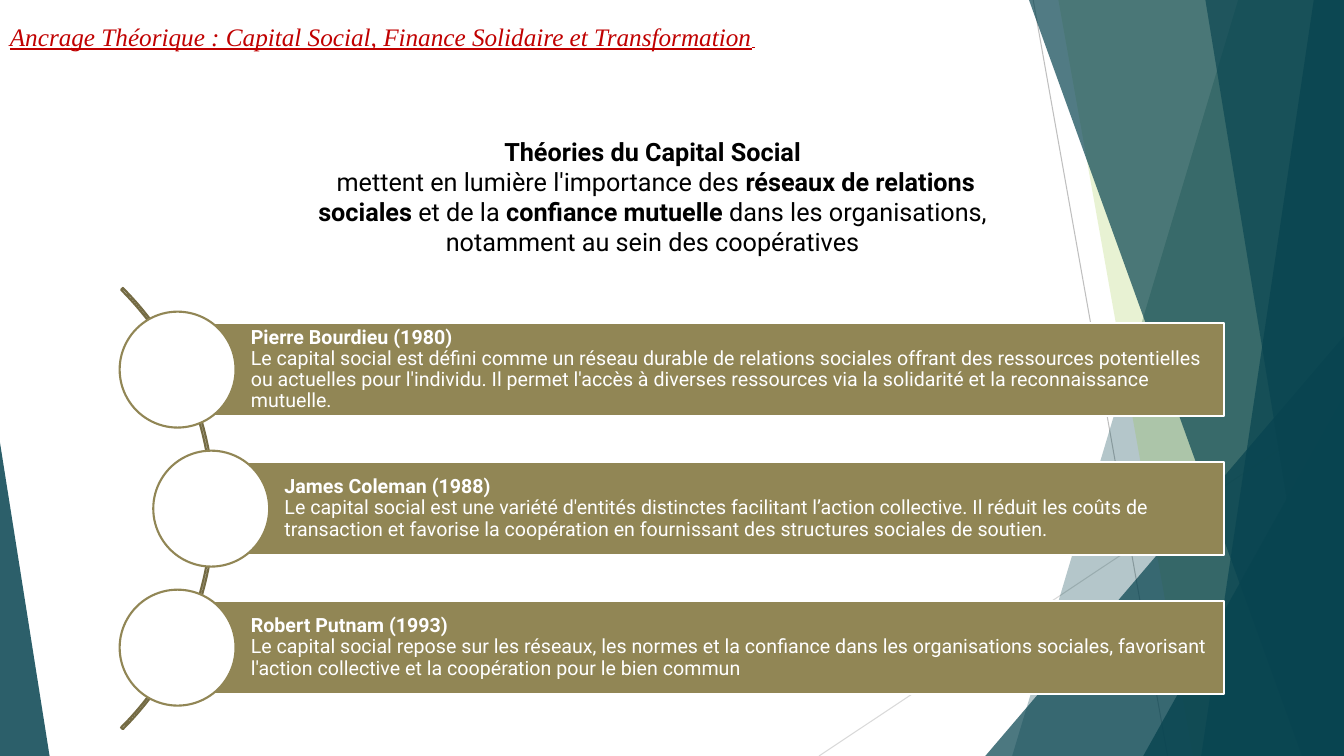
import lxml.etree
import pptx
import pptx.util
import pptx.dml.color
import pptx.enum.shapes
import pptx.enum.text
import pptx.oxml.ns

COLS, ROWS = 160, 90
COLORS = {
    "teal": "084450", "lime": "90C226", "olive": "918655", "arc": "746B44",
    "white": "FFFFFF", "black": "000000", "red": "C00000",
    "gray": "BFBFBF", "pale": "D9D9D9",
}
SHAPES = pptx.enum.shapes.MSO_SHAPE
ANCHORS = pptx.enum.text.MSO_ANCHOR
ALIGN = pptx.enum.text.PP_ALIGN


class Deck:
    """Style and current slide; lengths are columns and rows of a square grid."""

    def __init__(self):
        self.prs = pptx.Presentation()
        self.prs.slide_width = pptx.util.Inches(13.33)
        self.prs.slide_height = pptx.util.Inches(7.5)
        self.font = "Roboto"
        self.s = self.prs.slides.add_slide(self.prs.slide_layouts[6])

    def grid(self, *box):
        units = (self.prs.slide_width / COLS, self.prs.slide_height / ROWS)
        return [round(v * units[i % 2]) for i, v in enumerate(box)]

    def color(self, name):
        return pptx.dml.color.RGBColor.from_string(COLORS[name])

    def paint(self, sp, fill=None, alpha=100, line=None):
        sp.shadow.inherit = False
        if fill:
            sp.fill.solid()
            sp.fill.fore_color.rgb = self.color(fill)
        else:
            sp.fill.background()
        if alpha < 100:
            qn = pptx.oxml.ns.qn
            clr = sp._element.spPr.find(qn("a:solidFill")).find(qn("a:srgbClr"))
            lxml.etree.SubElement(clr, qn("a:alpha"), val=str(alpha * 1000))
        if line:
            sp.line.color.rgb = self.color(line)
            sp.line.width = pptx.util.Pt(1.5)
        else:
            sp.line.fill.background()
        return sp

    def shape(self, kind, box, adj=(), **style):
        sp = self.s.shapes.add_shape(kind, *self.grid(*box))
        for i, value in enumerate(adj):
            sp.adjustments[i] = value
        return self.paint(sp, **style)

    def panel(self, top, bottom, **style):
        """Band from a slanted left edge to the right edge of the slide."""
        corners = [(top, 0), (COLS, 0), (COLS, ROWS), (bottom, ROWS)]
        points = [self.grid(*c) for c in corners]
        builder = self.s.shapes.build_freeform(*points[0])
        builder.add_line_segments(points[1:], close=True)
        return self.paint(builder.convert_to_shape(), **style)

    def line(self, ends, color):
        cn = self.s.shapes.add_connector(
            pptx.enum.shapes.MSO_CONNECTOR.STRAIGHT, *self.grid(*ends))
        cn.line.color.rgb = self.color(color)
        cn.line.width = pptx.util.Pt(0.75)
        lxml.etree.SubElement(cn._element.spPr, pptx.oxml.ns.qn("a:effectLst"))

    def format(self, r, size, color, bold=False, font=None):
        r.font.name = font or self.font
        r.font.size = pptx.util.Pt(size)
        r.font.bold = bold
        r.font.color.rgb = self.color(color)

    def textbox(self, box):
        tf = self.s.shapes.add_textbox(*self.grid(*box)).text_frame
        tf.word_wrap = True
        return tf

    def title(self, text, box):
        p = self.textbox(box).paragraphs[0]
        p.text = text
        r = p.runs[0]
        self.format(r, 18, "red", font="Times New Roman")
        r.font.italic = r.font.underline = True
        tail = p.add_run()
        tail.text = " "
        self.format(tail, 10.5, "red")
        tail.font.italic = tail.font.underline = True

    def intro(self, paragraphs, box):
        tf = self.textbox(box)
        for i, parts in enumerate(paragraphs):
            p = tf.add_paragraph() if i else tf.paragraphs[0]
            p.alignment = ALIGN.CENTER
            for text, bold in parts:
                r = p.add_run()
                r.text = text
                self.format(r, 18, "black", bold)

    def author(self, name, idea, left, top):
        bar = self.shape(SHAPES.RECTANGLE, (left, top, 145.7 - left, 11),
                         fill="olive", line="white")
        tf = bar.text_frame
        tf.word_wrap = True
        tf.vertical_anchor = ANCHORS.MIDDLE
        tf.margin_left = pptx.util.Inches(0.73)
        tf.margin_top = tf.margin_right = tf.margin_bottom = pptx.util.Inches(0.04)
        p = tf.paragraphs[0]
        p.text = name + "\v" + idea
        p.alignment = ALIGN.LEFT
        p.line_spacing = 0.9
        for r, bold in zip(p.runs, (True, False)):
            self.format(r, 14, "white", bold)
        self.shape(SHAPES.OVAL, (left - 6.85, top - 1.4, 13.8, 13.8),
                   fill="white", line="olive")


AUTHORS = [
    ("Pierre Bourdieu (1980)",
     "Le capital social est défini comme un réseau durable de relations sociales "
     "offrant des ressources potentielles ou actuelles pour l'individu. Il permet "
     "l'accès à diverses ressources via la solidarité et la reconnaissance mutuelle."),
    ("James Coleman (1988)",
     "Le capital social est une variété d'entités distinctes facilitant l’action "
     "collective. Il réduit les coûts de transaction et favorise la coopération en "
     "fournissant des structures sociales de soutien."),
    ("Robert Putnam (1993)",
     "Le capital social repose sur les réseaux, les normes et la confiance dans les "
     "organisations sociales, favorisant l'action collective et la coopération pour "
     "le bien commun"),
]
INTRO = [
    [("Théories du Capital Social", True)],
    [(" mettent en lumière l'importance des ", False),
     ("réseaux de relations sociales", True),
     (" et de la ", False),
     ("confiance mutuelle", True),
     (" dans les organisations, notamment au sein des coopératives", False)],
]


def main():
    deck = Deck()

    # Background facets
    deck.line((123, 0, 139, ROWS), "gray")
    deck.line((COLS, 48.4, 97.5, ROWS), "pale")
    deck.panel(147.4, 120.5, fill="teal", alpha=30)
    deck.panel(126, 142, fill="lime", alpha=20)
    deck.shape(SHAPES.ISOSCELES_TRIANGLE, (117.3, 40, 42.7, 50), [1],
               fill="teal", alpha=72)
    for top, bottom, alpha in [(122.5, 155, 70), (156.4, 143, 70), (143.5, 158.2, 65)]:
        deck.panel(top, bottom, fill="teal", alpha=alpha)
    deck.shape(SHAPES.ISOSCELES_TRIANGLE, (136.1, 47.2, 23.9, 42.8), [1],
               fill="teal", alpha=80)
    deck.shape(SHAPES.ISOSCELES_TRIANGLE, (0, 52.7, 5.9, 37.3), [0],
               fill="teal", alpha=85)

    # Title
    deck.title("Ancrage Théorique : Capital Social, Finance Solidaire et Transformation",
               (0, 1.9, 112.8, 17.3))

    # Arc with the three authors
    deck.shape(SHAPES.BLOCK_ARC, (-48.8, 23.4, 74.3, 74.3), [189, 27, 0.004], line="arc")
    for i, (name, idea) in enumerate(AUTHORS):
        deck.author(name, idea, 25.1 if i == 1 else 21.1, 38.5 + 16.55 * i)

    # Introduction
    deck.intro(INTRO, (33.7, 15.6, 88, 19.4))

    deck.prs.save("out.pptx")


if __name__ == "__main__":
    main()
